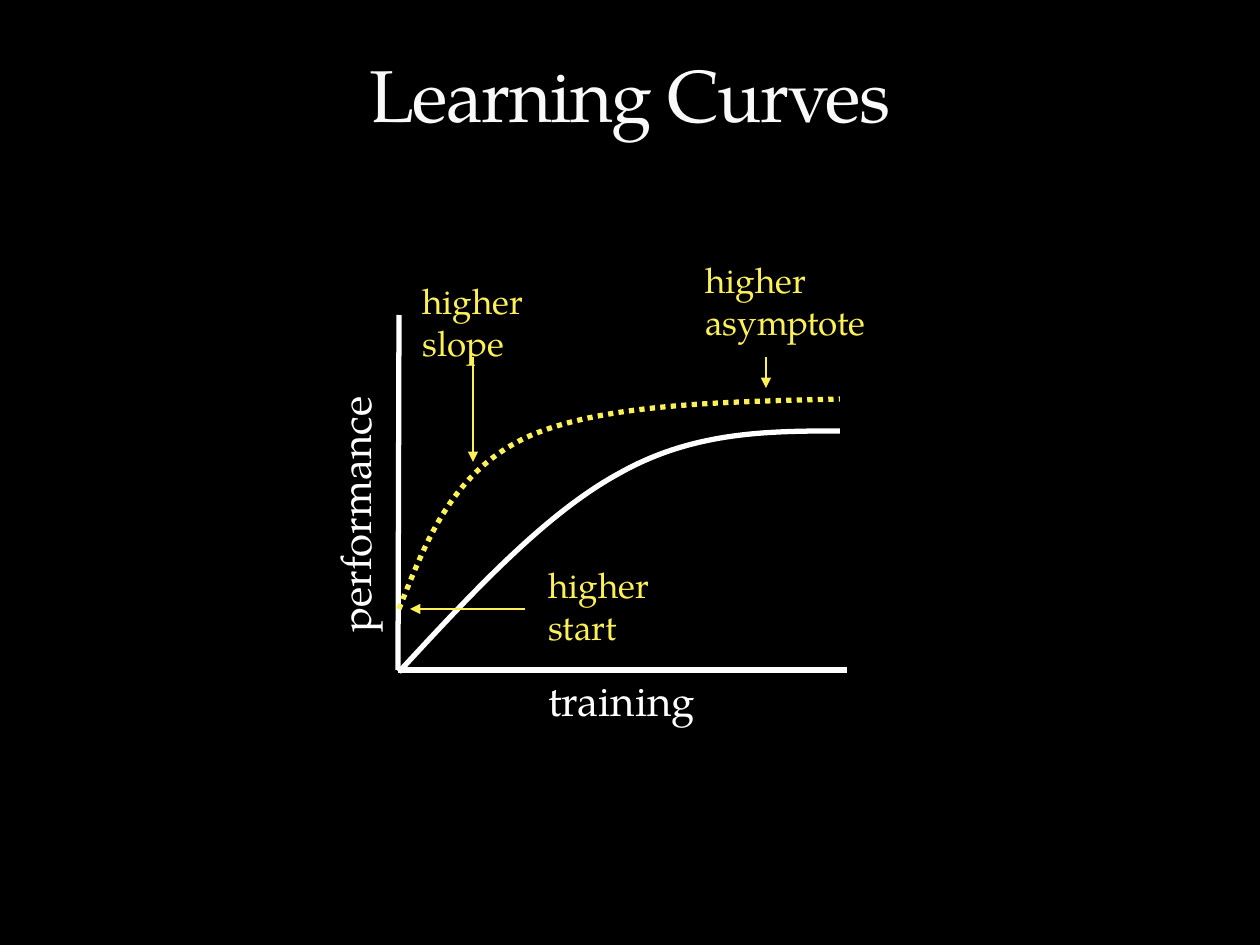
from dataclasses import dataclass

from lxml.etree import SubElement
from pptx import Presentation
from pptx.dml.color import RGBColor
from pptx.enum.dml import MSO_LINE_DASH_STYLE as DASH
from pptx.enum.shapes import MSO_CONNECTOR as CONNECTOR
from pptx.enum.text import MSO_ANCHOR as ANCHOR, PP_ALIGN as ALIGN
from pptx.oxml.ns import qn
from pptx.util import Pt

PX = 914400 / 126  # EMU per px


def emu(px):
    return round(px * PX)


@dataclass(frozen=True)
class Theme:
    font: str = "TeX Gyre Pagella"
    background: str = "000000"
    title: str = "F9F9F9"
    base: str = "FFFFFF"
    accent: str = "FCF059"
    title_size: int = 42
    axis_size: int = 24
    note_size: int = 20
    thick: float = 3
    thin: float = 0.75


class SlideBuilder:
    def __init__(self, prs, theme):
        self.theme = theme
        self.slide = prs.slides.add_slide(prs.slide_layouts[6])
        fill = self.slide.background.fill
        fill.solid()
        fill.fore_color.rgb = RGBColor.from_string(theme.background)

    def text(self, text, box, size, color, align=ALIGN.LEFT, rotation=0):
        sp = self.slide.shapes.add_textbox(*map(emu, box))
        sp.rotation = rotation
        tf = sp.text_frame
        tf.word_wrap = True
        tf.text = text
        p = tf.paragraphs[0]
        p.alignment = align
        font = p.runs[0].font
        font.name = self.theme.font
        font.size = Pt(size)
        font.color.rgb = RGBColor.from_string(color)
        return sp

    def title(self, text, box):
        t = self.theme
        tf = self.text(text, box, t.title_size, t.title, ALIGN.CENTER).text_frame
        tf.vertical_anchor = ANCHOR.BOTTOM
        tf.margin_top = tf.margin_bottom = 0
        # Letter spacing of -1 pt
        tf.paragraphs[0].runs[0].font._element.set("spc", "-100")

    def line(self, start, end, color, width, arrow=False):
        sp = self.slide.shapes.add_connector(
            CONNECTOR.STRAIGHT, *map(emu, start + end))
        sp.line.color.rgb = RGBColor.from_string(color)
        sp.line.width = Pt(width)
        if arrow:
            SubElement(sp.line._get_or_add_ln(), qn("a:tailEnd"), type="triangle")
        SubElement(sp._element.spPr, qn("a:effectLst"))

    def curve(self, points, color, dash=None):
        """Draw a start point followed by triples of Bezier points."""
        start, *rest = [tuple(map(emu, pt)) for pt in points]
        builder = self.slide.shapes.build_freeform(*start)
        builder.add_line_segments(rest, close=False)
        sp = builder.convert_to_shape()
        # Join each three straight segments into one cubic segment
        outline = next(sp._element.iter(qn("a:path")))
        steps = outline.findall(qn("a:lnTo"))
        for i in range(0, len(steps), 3):
            cubic = SubElement(outline, qn("a:cubicBezTo"))
            for step in steps[i:i + 3]:
                cubic.append(step[0])
                outline.remove(step)
        sp.shadow.inherit = False
        sp.fill.background()
        sp.line.color.rgb = RGBColor.from_string(color)
        sp.line.width = Pt(self.theme.thick)
        if dash:
            sp.line.dash_style = dash


def main():
    prs = Presentation()
    prs.slide_width, prs.slide_height = emu(1260), emu(945)
    t = Theme()
    s = SlideBuilder(prs, t)

    s.title("Learning Curves", (63, 21, 1134, 116))

    # Axes and their labels
    origin = (398, 670)
    s.line((399, 315), origin, t.base, t.thick)
    s.line((847, 670), origin, t.base, t.thick)
    s.text("performance", (218, 483, 273, 63), t.axis_size, t.base,
           ALIGN.CENTER, rotation=270)
    s.text("training", (530, 668, 183, 63), t.axis_size, t.base, ALIGN.CENTER)

    # Baseline curve
    s.curve([(399, 672), (473, 592), (546, 513), (620, 473),
             (693, 432), (766, 431), (840, 431)], t.base)

    # Notes, each with its arrow
    notes = [
        ("higher start", (536, 557, 163, 97), (525, 609), (410, 609)),
        ("higher slope", (410, 273, 152, 97), (473, 357), (473, 462)),
        ("higher asymptote", (693, 252, 189, 97), (766, 357), (766, 388)),
    ]
    for text, box, start, end in notes:
        s.text(text, box, t.note_size, t.accent)
        s.line(start, end, t.accent, t.thin, arrow=True)

    # Improved curve
    s.curve([(399, 609), (426, 542), (451, 474), (525, 438),
             (599, 404), (719, 402), (840, 399)], t.accent, DASH.ROUND_DOT)

    prs.save("out.pptx")


if __name__ == "__main__":
    main()
